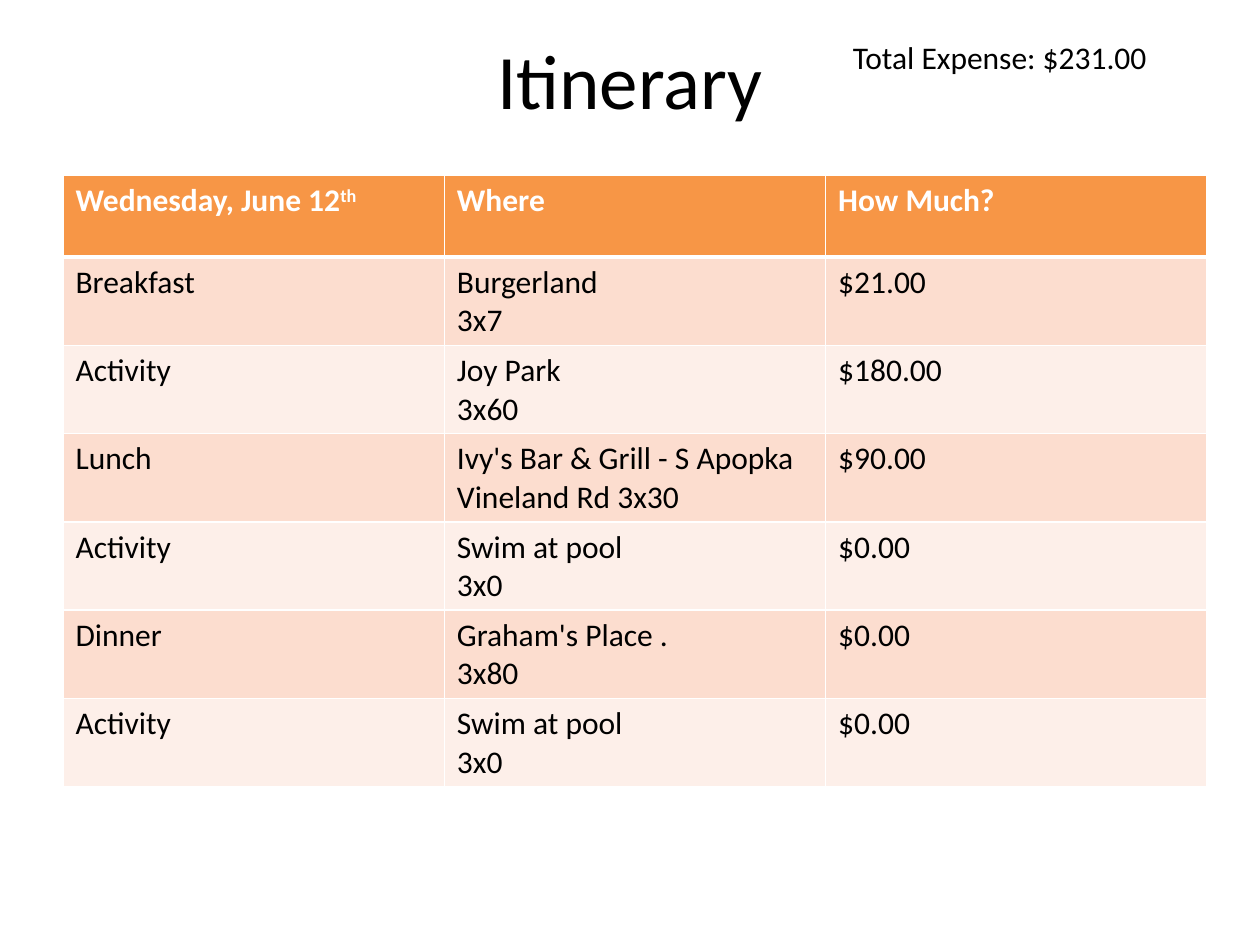
import pptx
import pptx.util
import pptx.dml.color
import pptx.enum.text
from lxml import etree
from pptx.oxml.ns import qn

Inches, Pt = pptx.util.Inches, pptx.util.Pt
RGB = pptx.dml.color.RGBColor.from_string
Anchor, Align = pptx.enum.text.MSO_ANCHOR, pptx.enum.text.PP_ALIGN

TITLE = "Itinerary"
TOTAL = "Total Expense: $231.00"
HEADINGS = ["Wednesday, June 12^th", "Where", "How Much?"]  # ^ starts a superscript
PLANS = [
    ("Breakfast", "Burgerland\n3x7", "$21.00"),
    ("Activity", "Joy Park\n3x60", "$180.00"),
    ("Lunch", "Ivy's Bar & Grill - S Apopka Vineland Rd 3x30", "$90.00"),
    ("Activity", "Swim at pool\n3x0", "$0.00"),
    ("Dinner", "Graham's Place .\n3x80", "$0.00"),
    ("Activity", "Swim at pool\n3x0", "$0.00"),
]

THEME = {
    "font": "Calibri", "title": 44, "body": 18,
    "text": "000000", "inverse": "FFFFFF", "border": "FFFFFF",
    "header": "F79646", "bands": ("FCDDCF", "FDEFE9"),
}
TITLE_BOX = (0.5, 0, 9, 1.25)
TOTAL_BOX = (6.67, 0.25, 3.08, 0.4)
TABLE_LEFT, TABLE_TOP, TABLE_WIDTH = 0.5, 1.39, 9.08
HEADER_HEIGHT, ROW_HEIGHT = 0.65, 0.7


def write(frame, text, size=THEME["body"], color=THEME["text"], bold=False, align=None):
    """Fill a frame, one paragraph a line; text after ^ is superscript."""
    for index, line in enumerate(text.split("\n")):
        para = frame.add_paragraph() if index else frame.paragraphs[0]
        para.alignment = align
        for part, words in enumerate(line.split("^")):
            span = para.add_run()
            span.text = words
            formats = {"name": THEME["font"], "size": Pt(size), "bold": bold}
            for name, value in formats.items():
                setattr(span.font, name, value)
            span.font.color.rgb = RGB(color)
            if part:
                span.font._element.set("baseline", "30000")


def add_borders(cell, bottom):
    props = cell._tc.get_or_add_tcPr()
    for index, (side, width) in enumerate([("L", 1), ("R", 1), ("T", 1), ("B", bottom)]):
        line = etree.Element(qn(f"a:ln{side}"), w=str(Pt(width)))
        fill = etree.SubElement(line, qn("a:solidFill"))
        etree.SubElement(fill, qn("a:srgbClr"), val=THEME["border"])
        props.insert(index, line)


def add_itinerary(page):
    rows = [HEADINGS, *PLANS]
    height = HEADER_HEIGHT + ROW_HEIGHT * len(PLANS)
    table = page.shapes.add_table(
        len(rows), len(HEADINGS),
        *map(Inches, (TABLE_LEFT, TABLE_TOP, TABLE_WIDTH, height))).table
    for column in table.columns:
        column.width = Inches(TABLE_WIDTH / len(HEADINGS))
    for r, texts in enumerate(rows):
        header = r == 0
        table.rows[r].height = Inches(HEADER_HEIGHT if header else ROW_HEIGHT)
        fill = THEME["header"] if header else THEME["bands"][(r - 1) % 2]
        for c, text in enumerate(texts):
            cell = table.cell(r, c)
            cell.fill.solid()
            cell.fill.fore_color.rgb = RGB(fill)
            add_borders(cell, 3 if header else 1)
            write(cell.text_frame, text, bold=header,
                  color=THEME["inverse" if header else "text"])


def main():
    deck = pptx.Presentation()
    deck.slide_width, deck.slide_height = Inches(10), Inches(7.5)
    page = deck.slides.add_slide(deck.slide_layouts[5])

    title = page.shapes.title
    for name, value in zip(("left", "top", "width", "height"), TITLE_BOX):
        setattr(title, name, Inches(value))
    title.text_frame.vertical_anchor = Anchor.MIDDLE
    write(title.text_frame, TITLE, size=THEME["title"], align=Align.CENTER)

    total = page.shapes.add_textbox(*map(Inches, TOTAL_BOX))
    total.text_frame.word_wrap = True
    write(total.text_frame, TOTAL)

    add_itinerary(page)
    deck.save("out.pptx")


if __name__ == "__main__":
    main()
